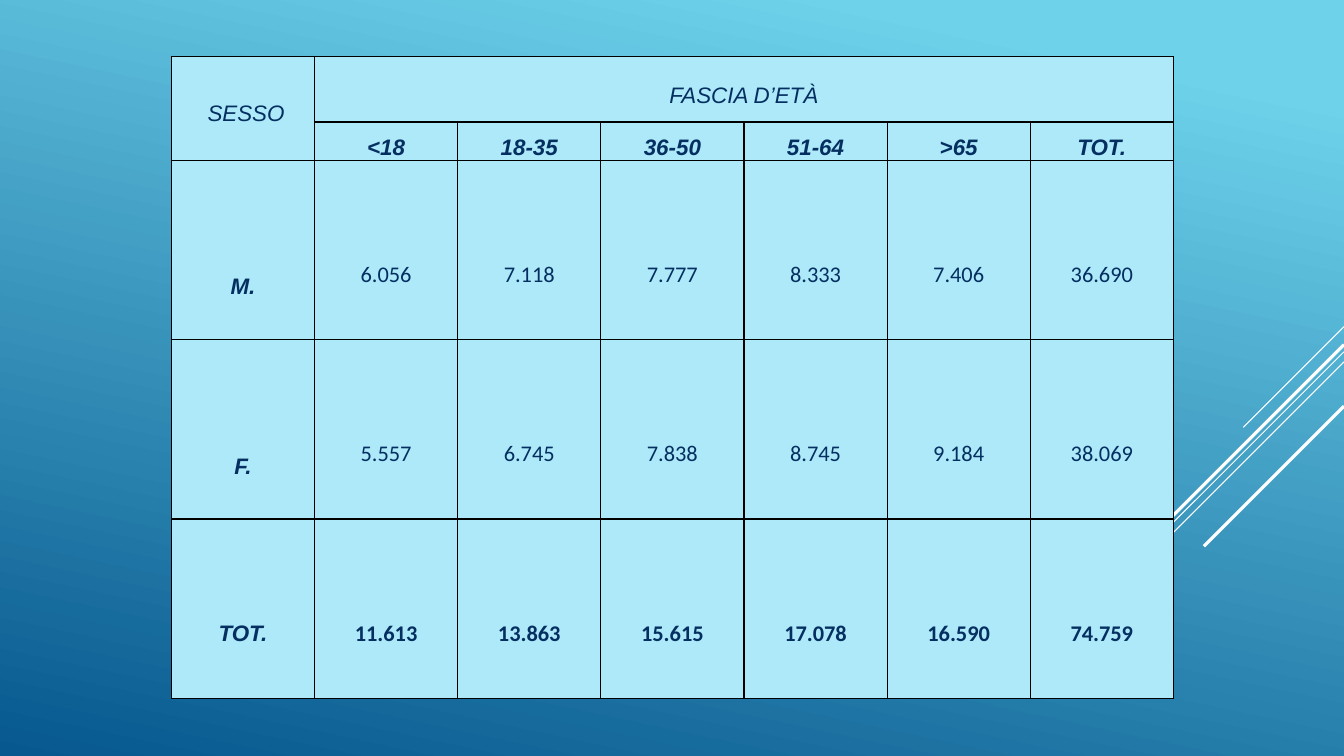
from pptx import Presentation
from pptx.dml.color import RGBColor
from pptx.enum.shapes import MSO_CONNECTOR
from pptx.enum.text import MSO_ANCHOR, PP_ALIGN
from pptx.oxml import parse_xml
from pptx.oxml.ns import nsdecls
from pptx.util import Inches, Pt

STRAIGHT = MSO_CONNECTOR.STRAIGHT
BOTTOM = MSO_ANCHOR.BOTTOM
MIDDLE = MSO_ANCHOR.MIDDLE
CENTER = PP_ALIGN.CENTER


def rgb(value):
    return RGBColor.from_string(value)


def fill_cell(cell, text, font, bold, italic, pad):
    cell.vertical_anchor = BOTTOM
    cell.margin_bottom = Inches(pad)
    p = cell.text_frame.paragraphs[0]
    p.alignment = CENTER
    r = p.add_run()
    r.text = text
    r.font.name = font
    r.font.size = Pt(16)
    r.font.bold = bold
    r.font.italic = italic
    r.font.color.rgb = rgb("052F61")


prs = Presentation()
prs.slide_width = Inches(13.33)
prs.slide_height = Inches(7.5)
s = prs.slides.add_slide(prs.slide_layouts[6])

bg = s.background.fill
bg.gradient()
bg.gradient_angle = 360 - 102
for stop, position, color in zip(bg.gradient_stops, (0.1, 1), ("6ED2EB", "06588E")):
    stop.position = position
    stop.color.rgb = rgb(color)

diagonals = [
    (3.24, 1.0, 0.75),
    (3.49, 3.26, 0.75),
    (3.59, 2.07, 0.75),
    (3.42, 1.91, 2.25),
    (4.03, 1.39, 2.25),
]
for top, reach, width in diagonals:
    line = s.shapes.add_connector(STRAIGHT, Inches(13.33), Inches(top),
                                  Inches(13.33 - reach), Inches(top + reach))
    line.line.color.rgb = rgb("FFFFFF")
    line.line.width = Pt(width)
    line._element.spPr.append(parse_xml(f"<a:effectLst {nsdecls('a')}/>"))

ages = ["<18", "18-35", "36-50", "51-64", ">65", "TOT."]
counts = [
    ("M.", 0.4, ["6.056", "7.118", "7.777", "8.333", "7.406", "36.690"]),
    ("F.", 0.4, ["5.557", "6.745", "7.838", "8.745", "9.184", "38.069"]),
    ("TOT.", 0.52, ["11.613", "13.863", "15.615", "17.078", "16.590", "74.759"]),
]
row_heights = [0.65, 0.38, 1.78, 1.78, 1.78]

table = s.shapes.add_table(5, 7, Inches(1.7), Inches(0.56),
                           Inches(9.94), Inches(6.37)).table
for column in table.columns:
    column.width = Inches(1.42)
for row, height in zip(table.rows, row_heights):
    row.height = Inches(height)

for cell in table.iter_cells():
    tcPr = cell._tc.get_or_add_tcPr()
    for side in ("lnL", "lnR", "lnT", "lnB"):
        tcPr.append(parse_xml(
            f'<a:{side} {nsdecls("a")} w="12700"><a:solidFill>'
            f'<a:srgbClr val="000000"/></a:solidFill></a:{side}>'))
    cell.fill.solid()
    cell.fill.fore_color.rgb = rgb("ADE9F8")
    cell.margin_left = cell.margin_right = Inches(0.07)
    cell.margin_top = cell.margin_bottom = 0

sex_header = table.cell(0, 0)
sex_header.merge(table.cell(1, 0))
table.cell(0, 1).merge(table.cell(0, 6))
fill_cell(sex_header, "SESSO", "Arial", False, True, 0)
sex_header.vertical_anchor = MIDDLE
sex_header.margin_top = Inches(0.11)
sex_header.margin_left = Inches(0.13)
fill_cell(table.cell(0, 1), "FASCIA D’ETÀ", "Arial", False, True, 0.14)
for col, age in enumerate(ages, 1):
    fill_cell(table.cell(1, col), age, "Arial", True, True, 0)
for row, (sex, pad, values) in enumerate(counts, 2):
    fill_cell(table.cell(row, 0), sex, "Arial", True, True, pad)
    for col, value in enumerate(values, 1):
        fill_cell(table.cell(row, col), value, "Calibri", sex == "TOT.", False, 0.51)

prs.save("out.pptx")
